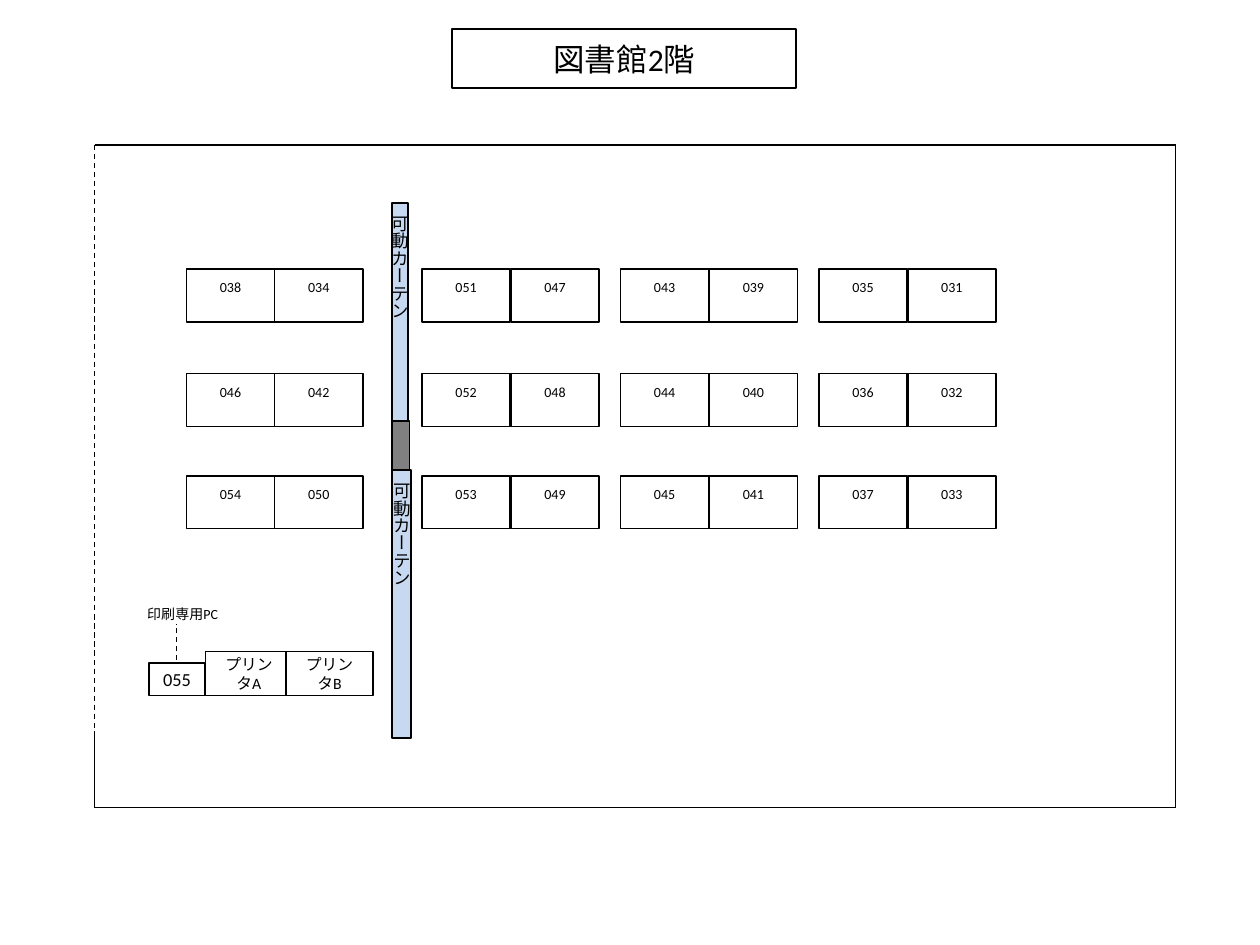
from dataclasses import dataclass
from itertools import product

from lxml.etree import SubElement
from pptx import Presentation
from pptx.dml.color import RGBColor
from pptx.enum.dml import MSO_LINE
from pptx.enum.shapes import MSO_CONNECTOR, MSO_SHAPE
from pptx.enum.text import MSO_ANCHOR, PP_ALIGN
from pptx.oxml.ns import qn
from pptx.util import Inches, Pt


@dataclass(frozen=True)
class Theme:
    font: str = "Calibri"
    ink: RGBColor = RGBColor(0, 0, 0)
    paper: RGBColor = RGBColor(255, 255, 255)
    curtain: RGBColor = RGBColor(0xC6, 0xD9, 0xF1)
    pillar: RGBColor = RGBColor(0x80, 0x80, 0x80)
    title: float = 18
    terminal: float = 10.5
    partition: float = 10
    printer: float = 9
    seat: float = 8
    outline: float = 1
    wall: float = 0.75


class FloorPlan:
    COLUMNS, ROWS = 100, 75

    def __init__(self, theme):
        self.theme = theme
        self.deck = Presentation()
        self.deck.slide_width, self.deck.slide_height = Inches(10), Inches(7.5)
        self.slide = self.deck.slides.add_slide(self.deck.slide_layouts[6])

    def place(self, column, row):
        return (round(self.deck.slide_width * column / self.COLUMNS),
                round(self.deck.slide_height * row / self.ROWS))

    def set_words(self, frame, words, size, align):
        frame.word_wrap = True
        line = frame.paragraphs[0]
        line.text = words
        line.alignment = align
        line.font.name = self.theme.font
        line.font.size = Pt(size)
        line.font.color.rgb = self.theme.ink

    def box(self, column, row, width, height, fill=None, words="", size=8,
            align=PP_ALIGN.CENTER):
        block = self.slide.shapes.add_shape(
            MSO_SHAPE.RECTANGLE, *self.place(column, row), *self.place(width, height))
        block.shadow.inherit = False
        block.fill.solid()
        block.fill.fore_color.rgb = fill or self.theme.paper
        block.line.color.rgb = self.theme.ink
        block.line.width = Pt(self.theme.outline)
        block.text_frame.vertical_anchor = MSO_ANCHOR.MIDDLE
        if words:
            self.set_words(block.text_frame, words, size, align)
        return block

    def seat(self, column, row, number):
        desk = self.box(column, row, 7, 4.2, words=f"{number:03}", size=self.theme.seat)
        desk.text_frame.margin_bottom = Inches(0.18)

    def curtain(self, column, row, width, height):
        panel = self.box(column, row, width, height, self.theme.curtain, "可動カーテン",
                         self.theme.partition, PP_ALIGN.LEFT)
        panel.text_frame._txBody.bodyPr.set("vert", "eaVert")

    def label(self, column, row, width, height, words):
        note = self.slide.shapes.add_textbox(
            *self.place(column, row), *self.place(width, height))
        self.set_words(note.text_frame, words, self.theme.seat, PP_ALIGN.LEFT)

    def line(self, start, end, dashed=False):
        stroke = self.slide.shapes.add_connector(
            MSO_CONNECTOR.STRAIGHT, *self.place(*start), *self.place(*end))
        stroke.line.color.rgb = self.theme.ink
        stroke.line.width = Pt(self.theme.wall)
        if dashed:
            stroke.line.dash_style = MSO_LINE.DASH
        SubElement(stroke._element.spPr, qn("a:effectLst"))


def main():
    theme = Theme()
    plan = FloorPlan(theme)

    west, east, north, south = 7.5, 93.3, 11.5, 64.1
    plan.line((west, north), (west, south), dashed=True)
    plan.line((west, north), (east, north))
    plan.line((east, north), (east, south))
    plan.line((west, south), (east, south))
    plan.line((west, 58), (west, south))
    plan.box(35.9, 2.3, 27.3, 4.7, words="図書館2階", size=theme.title)

    desk_rows = 21.35, 29.65, 37.75
    main_columns = [33.5 + 15.75 * pair + 7.05 * side
                    for pair, side in product(range(3), range(2))]
    for (rank, row), (file, column) in product(enumerate(desk_rows), enumerate(main_columns)):
        plan.seat(column, row, 51 + rank - 4 * file)
    for (rank, row), file in product(enumerate(desk_rows), range(2)):
        plan.seat(14.8 + 7 * file, row, 38 + 8 * rank - 4 * file)

    plan.curtain(31.1, 16.1, 1.3, 17.3)
    plan.box(31.1, 33.4, 1.4, 3.9, theme.pillar)
    plan.curtain(31.1, 37.3, 1.5, 21.3)

    for slot, letter in enumerate("AB"):
        plan.box(16.3 + 6.4 * slot, 51.7, 6.9, 3.5, words=f"プリンタ{letter}", size=theme.printer)
    plan.box(11.8, 52.6, 4.5, 2.6, words="055", size=theme.terminal)
    plan.label(10.7, 47.6, 8.6, 2.4, "印刷専用PC")
    plan.line((14, 52.4), (14, 49.5), dashed=True)

    plan.deck.save("out.pptx")


if __name__ == "__main__":
    main()
